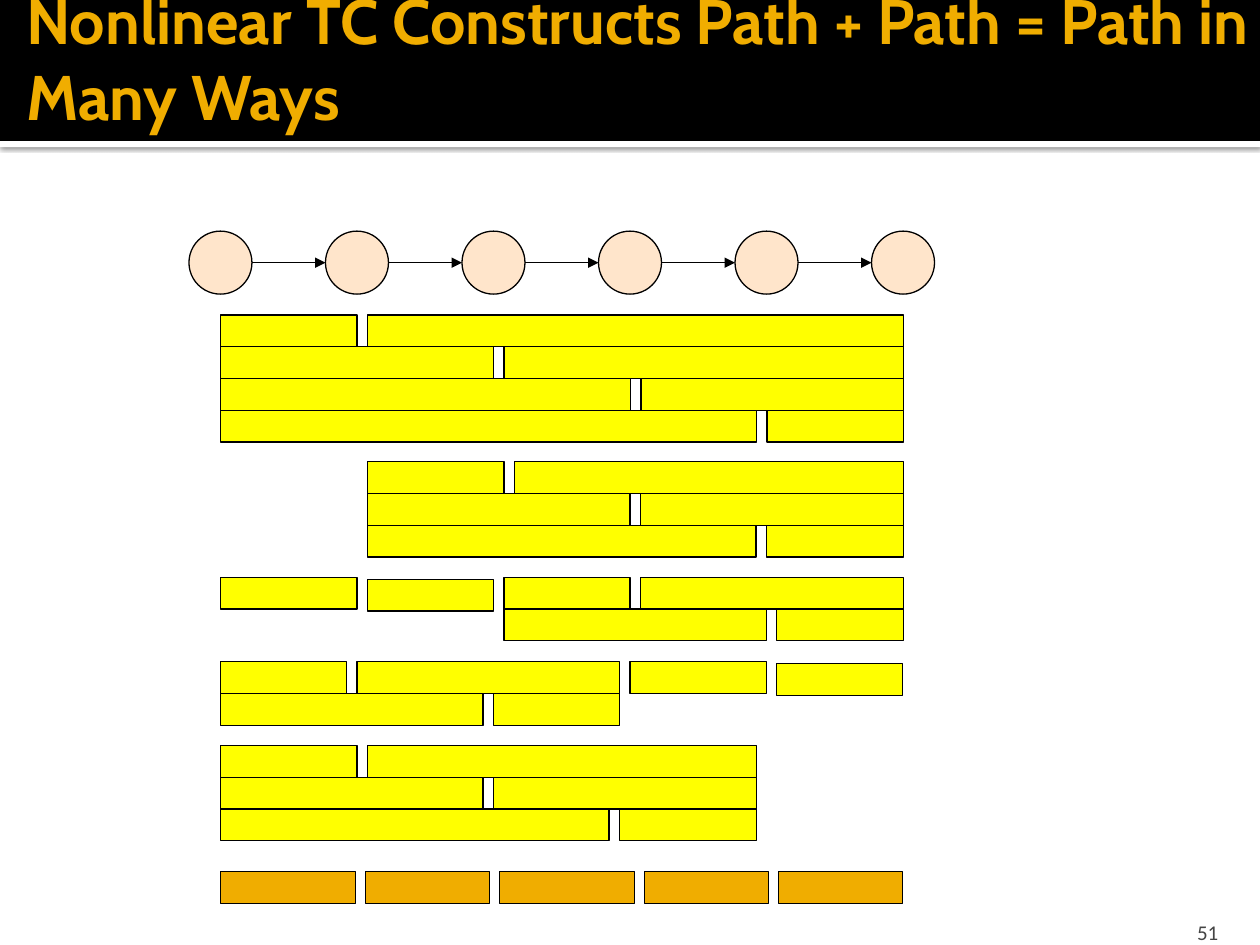
from lxml import etree
from pptx import Presentation
from pptx.dml.color import RGBColor
from pptx.enum.shapes import MSO_CONNECTOR, MSO_SHAPE
from pptx.enum.text import MSO_ANCHOR, PP_ALIGN
from pptx.oxml import parse_xml
from pptx.oxml.ns import nsdecls, qn
from pptx.util import Cm, Pt

RECTANGLE, OVAL = MSO_SHAPE.RECTANGLE, MSO_SHAPE.OVAL
STRAIGHT = MSO_CONNECTOR.STRAIGHT
MIDDLE, BOTTOM = MSO_ANCHOR.MIDDLE, MSO_ANCHOR.BOTTOM
LEFT, RIGHT = PP_ALIGN.LEFT, PP_ALIGN.RIGHT

BLACK = RGBColor(0x00, 0x00, 0x00)
WHITE = RGBColor(0xFF, 0xFF, 0xFF)
GOLD = RGBColor(0xF0, 0xAD, 0x00)
YELLOW = RGBColor(0xFF, 0xFF, 0x00)
PEACH = RGBColor(0xFF, 0xCC, 0x99)
GREY = RGBColor(0x45, 0x45, 0x45)

# Lengths in centimetres
PAGE_WIDTH, PAGE_HEIGHT = 25.4, 19.05
BAR_HEIGHT = 0.64
BAR_GAP = 0.21
ARC_GAP = 0.2
PAIR_DROP = 0.04  # second bar of a lone pair sits slightly lower

# Left, top, total width, first-bar width in each row, drop of the second bar
PATH_BLOCKS = [
    (4.45, 6.35, 13.76, [2.75, 5.5, 8.26, 10.8], 0),
    (4.45, 11.64, 5.5, [2.75], PAIR_DROP),
    (10.16, 11.64, 8.05, [2.54, 5.29], 0),
    (4.45, 13.34, 8.04, [2.54, 5.29], 0),
    (12.7, 13.34, 5.5, [2.75], PAIR_DROP),
    (7.41, 9.31, 10.8, [2.75, 5.29, 7.83], 0),
    (4.45, 15.03, 10.8, [2.75, 5.29, 7.83], 0),
]
ARC_WIDTHS = [2.72, 2.5, 2.72, 2.5, 2.5]


def add_figure(shapes, kind, left, top, width, height, fill, outline=True):
    figure = shapes.add_shape(kind, Cm(left), Cm(top), Cm(width), Cm(height))
    figure.shadow.inherit = False
    figure.fill.solid()
    figure.fill.fore_color.rgb = fill
    if outline:
        figure.line.color.rgb = BLACK
        figure.line.width = Pt(0.75)
    else:
        figure.line.fill.background()
    return figure


def add_text(page, box, text, font, size, color, align, anchor, margins, bold=False):
    frame = page.shapes.add_textbox(*map(Cm, box)).text_frame
    frame.word_wrap = True
    frame.vertical_anchor = anchor
    (frame.margin_left, frame.margin_top,
     frame.margin_right, frame.margin_bottom) = map(Cm, margins)
    para = frame.paragraphs[0]
    para.alignment = align
    span = para.add_run()
    span.text = text
    span.font.name = font
    span.font.size = Pt(size)
    span.font.bold = bold
    span.font.color.rgb = color


def add_header(page, left, top, width, height):
    # White rule with a soft shadow under the black band
    rule = add_figure(page.shapes, RECTANGLE, left, top + height, width, 0.13, WHITE, False)
    effects = rule._element.spPr.find(qn("a:effectLst"))
    effects.append(parse_xml(
        f'<a:outerShdw {nsdecls("a")} blurRad="31750" dist="10160" dir="5400000">'
        '<a:srgbClr val="000000"><a:alpha val="60000"/></a:srgbClr></a:outerShdw>'))
    add_figure(page.shapes, RECTANGLE, left, top, width, height, BLACK, False)
    add_text(page, (left + 0.28, top - 0.43, width, 3.18),
             "Nonlinear TC Constructs Path + Path = Path in Many Ways",
             "Cabin", 36, GOLD, LEFT, MIDDLE, (0.25, 0.13, 0.13, 0.13), True)


def add_arrow(shapes, start, end, height):
    arrow = shapes.add_connector(STRAIGHT, Cm(start), Cm(height), Cm(end), Cm(height))
    arrow.line.color.rgb = BLACK
    arrow.line.width = Pt(0.75)
    etree.SubElement(arrow.line._get_or_add_ln(), qn("a:tailEnd"), type="triangle")
    etree.SubElement(arrow._element.spPr, qn("a:effectLst"))


def add_chain(page, left, top, width, size, count):
    shapes = page.shapes.add_group_shape().shapes
    step = (width - size) / (count - 1)
    for index in range(count):
        x = left + index * step
        node = add_figure(shapes, OVAL, x, top, size, size, PEACH)
        color = node._element.spPr.find(qn("a:solidFill"))[0]
        etree.SubElement(color, qn("a:alpha"), val="50000")
        if index:
            add_arrow(shapes, x - step + size, x, top + size / 2)


def add_path_block(page, left, top, width, splits, drop):
    shapes = page.shapes.add_group_shape().shapes
    for row, first in enumerate(splits):
        y = top + row * BAR_HEIGHT
        second = first + BAR_GAP
        add_figure(shapes, RECTANGLE, left, y, first, BAR_HEIGHT, YELLOW)
        add_figure(shapes, RECTANGLE, left + second, y + drop,
                   width - second, BAR_HEIGHT, YELLOW)


def add_arc_row(page, left, top, widths):
    shapes = page.shapes.add_group_shape().shapes
    for width in widths:
        add_figure(shapes, RECTANGLE, left, top, width, BAR_HEIGHT, GOLD)
        left += width + ARC_GAP


def main():
    deck = Presentation()
    deck.slide_width, deck.slide_height = Cm(PAGE_WIDTH), Cm(PAGE_HEIGHT)
    page = deck.slides.add_slide(deck.slide_layouts[6])

    add_header(page, 0, 0, PAGE_WIDTH, 2.84)
    # Page number
    add_text(page, (22.78, 18.29, 2.03, 0.76), "51", "Calibri", 12, GREY,
             RIGHT, BOTTOM, (0.25, 0.13, 0.25, 0))
    # Graph of six nodes, then the pairs of paths joined, then the single arcs
    add_chain(page, 3.81, 4.66, 15.03, 1.27, 6)
    for block in PATH_BLOCKS:
        add_path_block(page, *block)
    add_arc_row(page, 4.45, 17.57, ARC_WIDTHS)

    deck.save("out.pptx")


if __name__ == "__main__":
    main()
